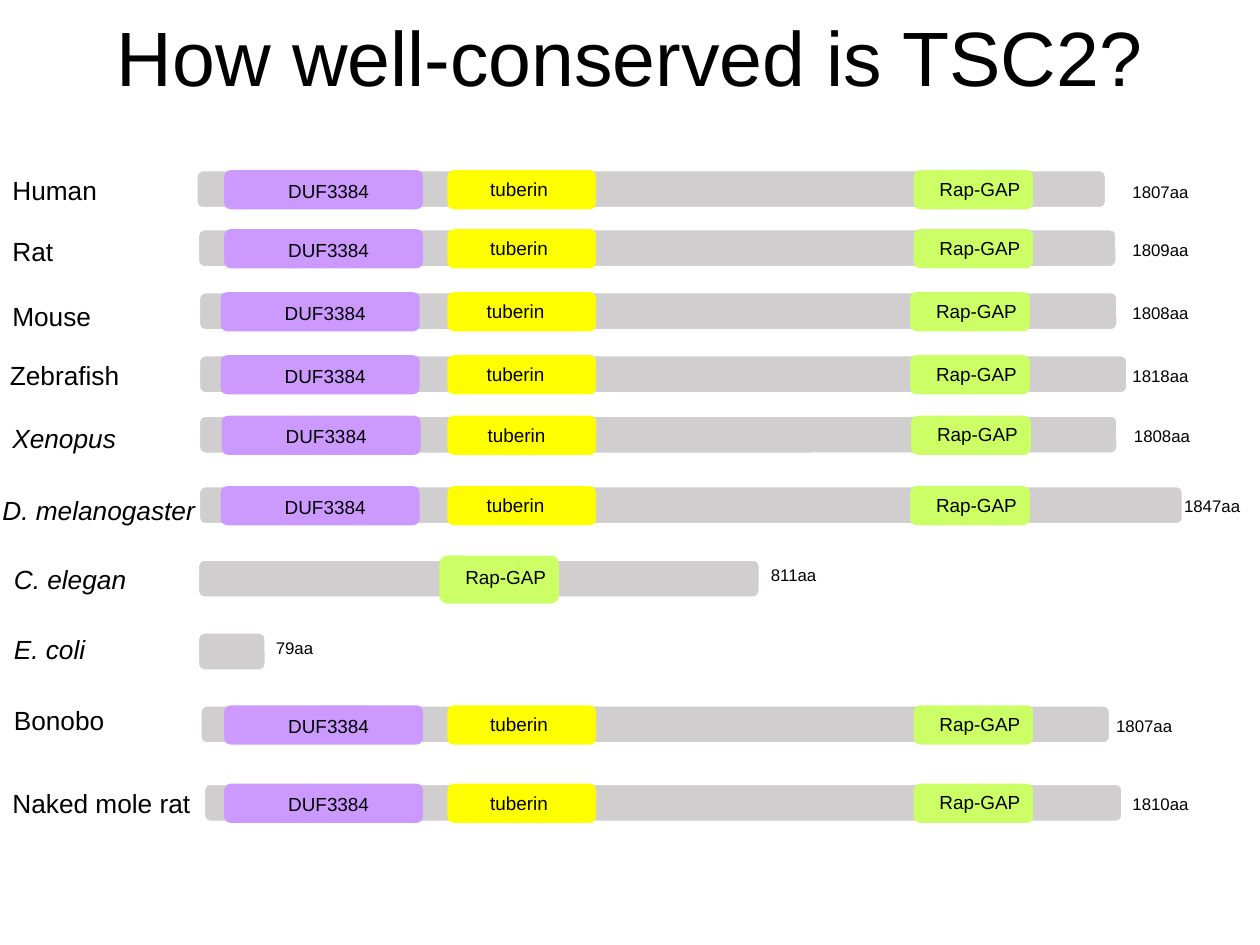
from dataclasses import dataclass

import pptx
import pptx.dml.color
import pptx.enum.shapes
import pptx.enum.text
import pptx.util
from pptx.util import Cm

BLACK = pptx.dml.color.RGBColor(0x00, 0x00, 0x00)
WHITE = pptx.dml.color.RGBColor(0xFF, 0xFF, 0xFF)
GREY = pptx.dml.color.RGBColor(0xD0, 0xCE, 0xCE)
PURPLE = pptx.dml.color.RGBColor(0xCC, 0x99, 0xFF)
YELLOW = pptx.dml.color.RGBColor(0xFF, 0xFF, 0x00)
GREEN = pptx.dml.color.RGBColor(0xCC, 0xFF, 0x66)

FONT = "Arial"
BAR_HEIGHT = 0.77
DOMAIN_HEIGHT = 0.79


# All lengths below are in centimetres
@dataclass
class Domain:
    name: str
    left: float
    width: float
    label_left: float
    label_drop: float
    color: pptx.dml.color.RGBColor
    shifts: bool = True


@dataclass
class Protein:
    species: str
    top: float
    bar_left: float
    bar_width: float
    name_left: float
    name_top: float
    length: str
    length_left: float
    length_top: float
    shift: float = 0
    italic: bool = False
    name_width: float = 4.1
    complete: bool = True


RAP_GAP = Domain("Rap-GAP", 18.42, 2.41, 18.69, 0.02, GREEN)
DOMAINS = [
    Domain("DUF3384", 4.52, 4.01, 5.56, 0.06, PURPLE),
    Domain("tuberin", 9.02, 3, 9.63, 0.03, YELLOW, shifts=False),
    RAP_GAP,
]

PROTEINS = [
    Protein("Human", 3.43, 3.96, 18.34, 0, 3.38, "1807aa", 22.58, 3.53),
    Protein("Rat", 4.62, 3.99, 18.52, 0, 4.62, "1809aa", 22.58, 4.7),
    Protein("Mouse", 5.89, 4.01, 18.52, 0, 5.92, "1808aa", 22.58, 5.97, shift=-0.07),
    Protein("Zebrafish", 7.16, 4.01, 18.72, -0.05, 7.11, "1818aa", 22.58, 7.24,
            shift=-0.07),
    Protein("Xenopus", 8.38, 4.01, 18.52, 0, 8.38, "1808aa", 22.61, 8.46,
            shift=-0.05, italic=True),
    Protein("D. melanogaster", 9.8, 4.01, 19.84, -0.2, 9.83, "1847aa", 23.62, 9.86,
            shift=-0.07, italic=True, name_width=4.88),
    Protein("C. elegan", 11.28, 3.99, 11.33, 0.03, 11.23, "811aa", 15.29, 11.25,
            italic=True, complete=False),
    Protein("E. coli", 12.75, 3.99, 1.37, 0.03, 12.65, "79aa", 5.31, 12.73,
            italic=True, complete=False),
    Protein("Bonobo", 14.22, 4.04, 18.34, 0.03, 14.07, "1807aa", 22.25, 14.3),
    Protein("Naked mole rat", 15.8, 4.11, 18.52, 0, 15.75, "1810aa", 22.58, 15.88,
            name_width=4.88),
]


def add_title(slide, text):
    title = slide.shapes.title
    title.left, title.top, title.width, title.height = Cm(0), Cm(0.03), Cm(25.4), Cm(2.41)
    frame = title.text_frame
    frame.text = text
    frame.auto_size = pptx.enum.text.MSO_AUTO_SIZE.NONE
    frame.vertical_anchor = pptx.enum.text.MSO_ANCHOR.MIDDLE
    paragraph = frame.paragraphs[0]
    paragraph.alignment = pptx.enum.text.PP_ALIGN.CENTER
    paragraph.line_spacing = 0.9
    set_font(paragraph, 44)


def set_font(paragraph, size, italic=False):
    paragraph.font.name = FONT
    paragraph.font.size = pptx.util.Pt(size)
    paragraph.font.italic = italic
    paragraph.font.color.rgb = BLACK


def add_label(slide, text, left, top, width, height, size, italic=False):
    box = slide.shapes.add_textbox(Cm(left), Cm(top), Cm(width), Cm(height))
    frame = box.text_frame
    frame.word_wrap = True
    frame.auto_size = pptx.enum.text.MSO_AUTO_SIZE.SHAPE_TO_FIT_TEXT
    frame.text = text
    set_font(frame.paragraphs[0], size, italic)


def add_block(slide, left, top, width, height, color):
    shape = slide.shapes.add_shape(
        pptx.enum.shapes.MSO_SHAPE.ROUNDED_RECTANGLE,
        Cm(left), Cm(top), Cm(width), Cm(height))
    shape.shadow.inherit = False
    shape.fill.solid()
    shape.fill.fore_color.rgb = color
    shape.line.fill.background()
    return shape


def add_domain(slide, domain, top, shift=0, height=DOMAIN_HEIGHT, label_drop=None):
    block_left = domain.left + (shift if domain.shifts else 0)
    drop = domain.label_drop if label_drop is None else label_drop
    add_block(slide, block_left, top, domain.width, height, domain.color)
    add_label(slide, domain.name, domain.label_left + shift, top + drop,
              2.87, 0.71, 10.8)


def add_protein(slide, protein):
    bar = add_block(slide, protein.bar_left, protein.top, protein.bar_width,
                    BAR_HEIGHT, GREY)
    bar.line.color.rgb = WHITE
    bar.line.width = pptx.util.Pt(1.5)
    if protein.complete:
        for domain in DOMAINS:
            add_domain(slide, domain, protein.top, protein.shift)
    add_label(slide, protein.species, protein.name_left, protein.name_top,
              protein.name_width, 0.89, 15, protein.italic)
    add_label(slide, protein.length, protein.length_left, protein.length_top,
              2.24, 0.66, 9.6)


def main():
    presentation = pptx.Presentation()
    presentation.slide_width, presentation.slide_height = Cm(25.4), Cm(19.05)
    slide = presentation.slides.add_slide(presentation.slide_layouts[5])
    add_title(slide, "How well-conserved is TSC2?")

    # One row per species
    for protein in PROTEINS:
        add_protein(slide, protein)

    # The only domain of the short C. elegan protein
    add_domain(slide, RAP_GAP, 11.2, shift=-9.56, height=0.97, label_drop=0.08)

    presentation.save("out.pptx")


if __name__ == "__main__":
    main()
